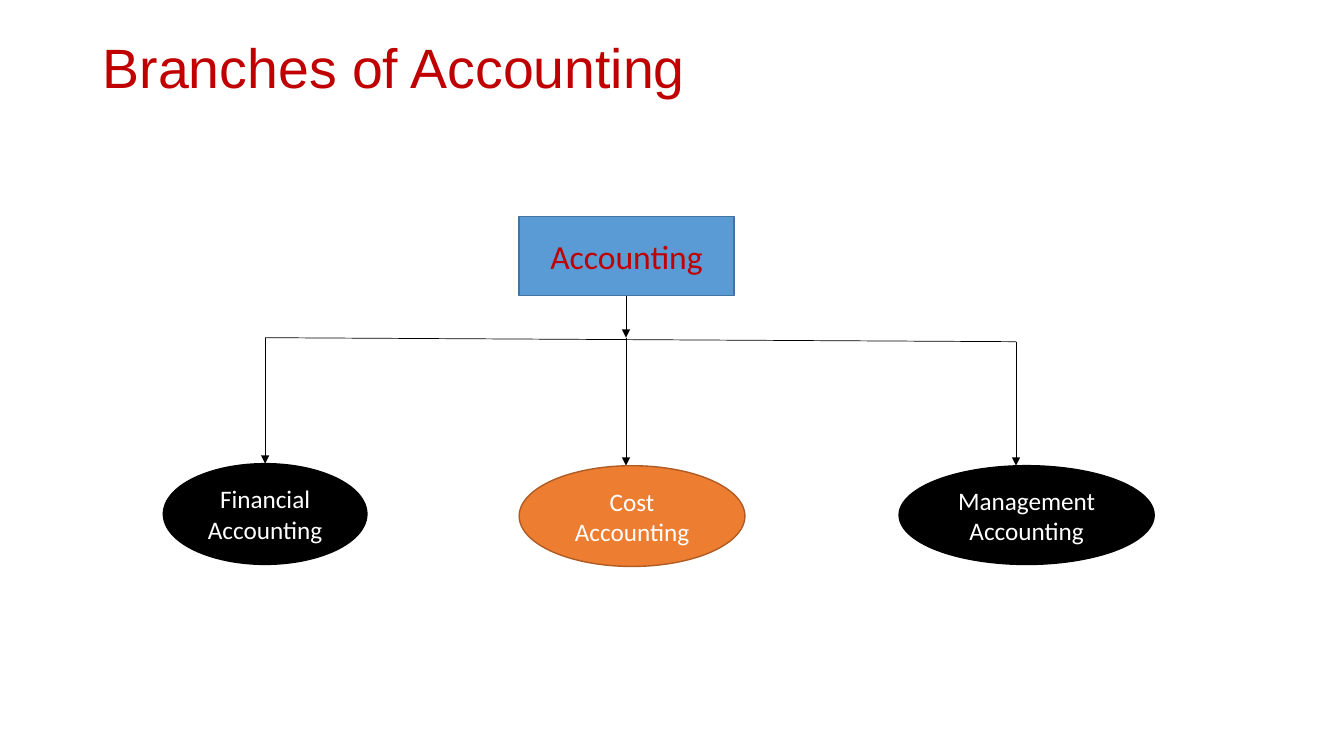
from lxml.etree import SubElement
from pptx import Presentation
from pptx.dml.color import RGBColor
from pptx.enum.shapes import MSO_CONNECTOR as CONN, MSO_SHAPE as SHAPE
from pptx.enum.text import MSO_ANCHOR as ANCHOR, PP_ALIGN as ALIGN
from pptx.oxml.ns import qn
from pptx.util import Inches, Pt

RED = RGBColor(0xC0, 0x00, 0x00)
BLUE = RGBColor(0x5B, 0x9B, 0xD5)
BLUE_EDGE = RGBColor(0x43, 0x73, 0x9E)
ORANGE = RGBColor(0xED, 0x7D, 0x31)
ORANGE_EDGE = RGBColor(0xAF, 0x5C, 0x24)
BLACK = RGBColor(0x00, 0x00, 0x00)
WHITE = RGBColor(0xFF, 0xFF, 0xFF)

prs = Presentation()
prs.slide_width = Inches(13.333)
prs.slide_height = Inches(7.5)
COL = prs.slide_width / 100
ROW = prs.slide_height / 100
slide = prs.slides.add_slide(prs.slide_layouts[6])


def grid(x, y, *rest):
    return [round(v * unit) for v, unit in zip((x, y, *rest), (COL, ROW) * 2)]


def write(sp, text, font, size, color, align):
    tf = sp.text_frame
    tf.word_wrap = True
    tf.vertical_anchor = ANCHOR.MIDDLE
    tf.text = text
    p = tf.paragraphs[0]
    p.alignment = align
    r = p.runs[0]
    r.font.name = font
    r.font.size = Pt(size)
    r.font.color.rgb = color


title = slide.shapes.add_textbox(*grid(6.9, 5.33, 86.25, 8))
write(title, "Branches of Accounting", "Arial", 39.6, RED, ALIGN.LEFT)
title.text_frame.paragraphs[0].line_spacing = 0.9

left, middle, right = 19.73, 46.58, 75.6
root_bottom, bar_left, bar_right = 39.07, 44.67, 45.2
leaf_top, left_top = 61.6, 61.33

lines = [
    (middle, root_bottom, middle, bar_left, True),
    (left, bar_left, right, bar_right, False),
    (left, bar_left, left, left_top, True),
    (middle, bar_left, middle, leaf_top, True),
    (right, bar_right, right, leaf_top, True),
]
for *ends, arrow in lines:
    cxn = slide.shapes.add_connector(CONN.STRAIGHT, *grid(*ends))
    cxn.line.color.rgb = BLACK
    cxn.line.width = Pt(0.5)
    if arrow:
        SubElement(cxn.line._get_or_add_ln(), qn("a:tailEnd"), type="triangle")
    SubElement(cxn._element.spPr, qn("a:effectLst"))

nodes = [
    ("Accounting", SHAPE.RECTANGLE, (38.63, 28.67, 15.98, 10.4), BLUE, BLUE_EDGE, 24, RED),
    ("Financial Accounting", SHAPE.OVAL, (12.15, left_top, 15.15, 13.33), BLACK, BLACK, 18, WHITE),
    ("Cost Accounting", SHAPE.OVAL, (38.63, leaf_top, 16.8, 13.33), ORANGE, ORANGE_EDGE, 18, WHITE),
    ("Management Accounting", SHAPE.OVAL, (66.9, leaf_top, 18.98, 13.07), BLACK, BLACK, 18, WHITE),
]
for text, kind, box, fill, edge, size, color in nodes:
    sp = slide.shapes.add_shape(kind, *grid(*box))
    sp.shadow.inherit = False
    sp.fill.solid()
    sp.fill.fore_color.rgb = fill
    sp.line.color.rgb = edge
    sp.line.width = Pt(1)
    write(sp, text, "Calibri", size, color, ALIGN.CENTER)

prs.save("out.pptx")
